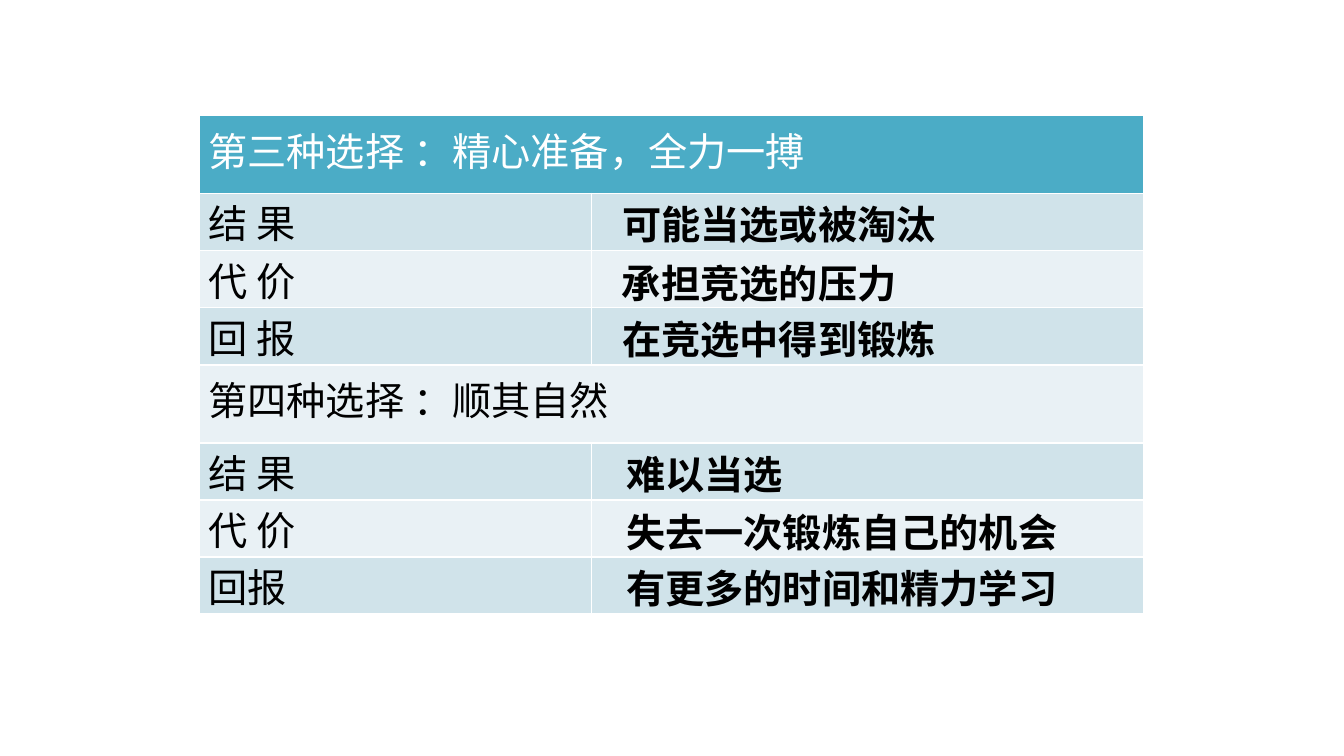
import pptx
import pptx.dml.color
import pptx.oxml
import pptx.util
from dataclasses import dataclass

Inches = pptx.util.Inches


@dataclass(frozen=True)
class Theme:
    font: str = "Calibri"
    size: int = 21
    ink: str = "000000"
    white: str = "FFFFFF"
    head: str = "4BACC6"
    dark: str = "D0E3EA"
    light: str = "E9F1F5"


THEME = Theme()

# Each choice: heading, row labels, answers, left edge and tops of the answers
CHOICES = [
    ("第三种选择 ：精心准备，全力一搏", ["结 果", "代 价", "回 报"],
     ["可能当选或被淘汰", "承担竞选的压力", "在竞选中得到锻炼"],
     3.05, [0.58, 1.02, 1.44]),
    ("第四种选择 ：顺其自然", ["结 果", "代 价", "回报"],
     ["难以当选", "失去一次锻炼自己的机会", "有更多的时间和精力学习"],
     3.08, [2.44, 2.87, 3.29]),
]


def color(code):
    return pptx.dml.color.RGBColor.from_string(code)


def write(frame, text, ink, bold=False):
    run = frame.paragraphs[0].add_run()
    run.text = text
    run.font.name = THEME.font
    run.font.size = pptx.util.Pt(THEME.size)
    run.font.bold = bold
    run.font.color.rgb = color(ink)


def border(cell):
    props = cell._tc.get_or_add_tcPr()
    for place, side in enumerate(("lnL", "lnR", "lnT", "lnB")):
        line = pptx.oxml.parse_xml(
            f'<a:{side} xmlns:a="http://schemas.openxmlformats.org/drawingml/2006/main"'
            f' w="{pptx.util.Pt(1)}"><a:solidFill><a:srgbClr val="{THEME.white}"/>'
            f'</a:solidFill></a:{side}>')
        props.insert(place, line)


def add_grid(slide, left, top, width, height):
    labels = [text for head, names, *_ in CHOICES for text in (head, *names)]
    span = len(labels) // len(CHOICES)
    tall = {0: 0.58, span: 0.58}
    short = (height - sum(tall.values())) / (len(labels) - len(tall))
    table = slide.shapes.add_table(
        len(labels), 2, Inches(left), Inches(top),
        Inches(width), Inches(height)).table
    first = 2.92
    table.columns[0].width = Inches(first)
    table.columns[1].width = Inches(width - first)

    for row, label in enumerate(labels):
        table.rows[row].height = Inches(tall.get(row, short))
        fill = THEME.dark if row % 2 else THEME.light
        if row == 0:
            fill = THEME.head
        # Short rows need their full height for the text line
        pad = 0.04 if row in tall else 0
        for col in range(2):
            cell = table.cell(row, col)
            cell.margin_left = cell.margin_right = Inches(0.07)
            cell.margin_top = cell.margin_bottom = Inches(pad)
            cell.fill.solid()
            cell.fill.fore_color.rgb = color(fill)
            border(cell)
            # Keep the empty answer cells from stretching their row
            cell.text_frame.paragraphs[0].font.size = pptx.util.Pt(THEME.size)
        if row in tall:
            table.cell(row, 0).merge(table.cell(row, 1))
        write(table.cell(row, 0).text_frame, label,
              THEME.ink if row else THEME.white)


def add_notes(slide, left, top, width, height):
    for _, _, texts, indent, tops in CHOICES:
        for text, drop in zip(texts, tops):
            # Box as wide as its characters plus the side insets
            wide = len(text) * THEME.size / 72 + 0.2
            box = slide.shapes.add_textbox(
                Inches(left + indent), Inches(top + drop),
                Inches(wide), Inches(0.45))
            frame = box.text_frame
            frame.word_wrap = False
            write(frame, text, THEME.ink, bold=True)


def main():
    deck = pptx.Presentation()
    # Widescreen, 16 to 9
    deck.slide_width, deck.slide_height = Inches(10), Inches(10 * 9 / 16)
    slide = deck.slides.add_slide(deck.slide_layouts[6])
    area = (1.48, 0.86, 7.03, 3.71)
    add_grid(slide, *area)
    add_notes(slide, *area)
    deck.save("out.pptx")


if __name__ == "__main__":
    main()
